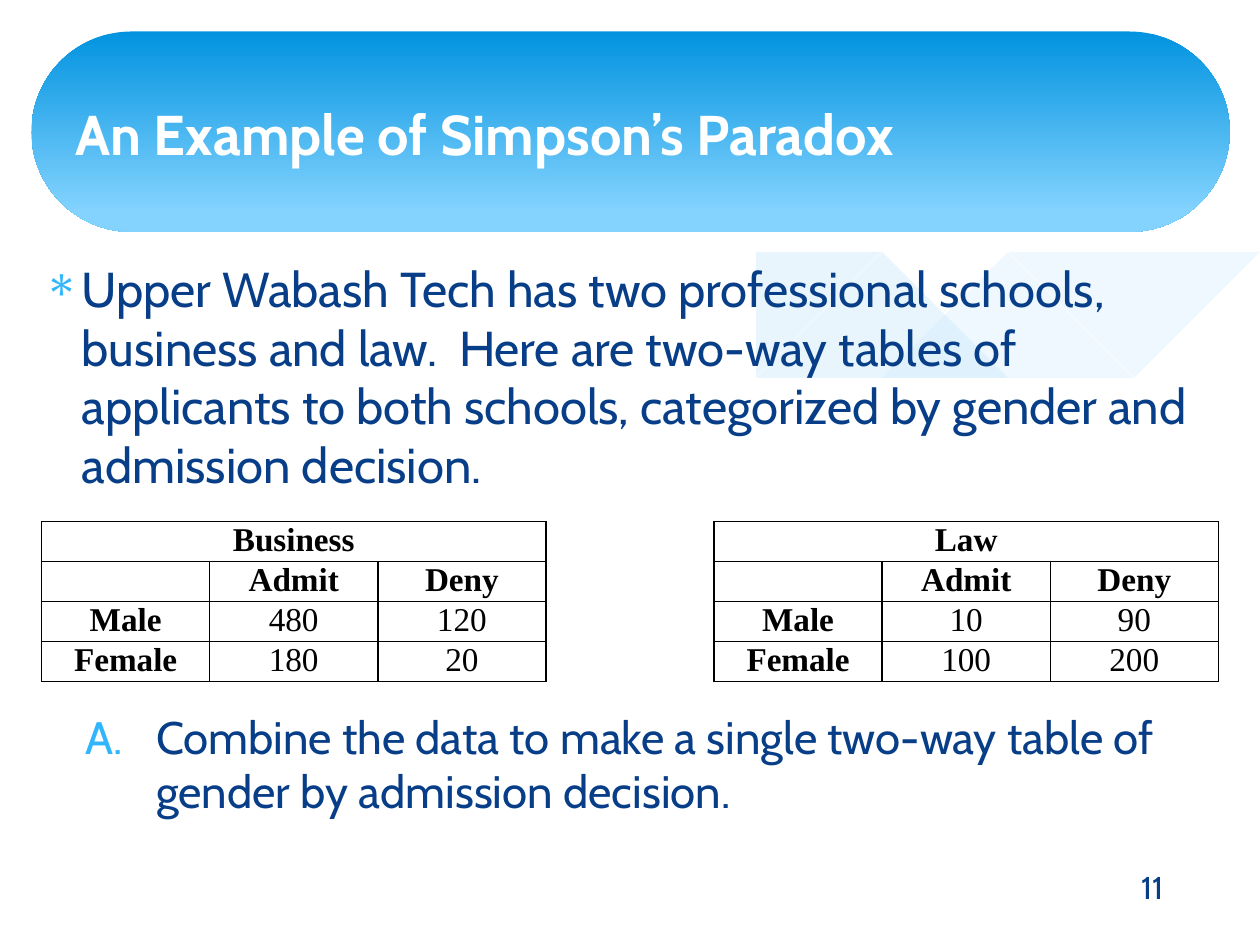
from lxml.etree import SubElement
from pptx import Presentation
from pptx.dml.color import RGBColor
from pptx.enum.shapes import MSO_SHAPE
from pptx.enum.text import MSO_ANCHOR, PP_ALIGN
from pptx.oxml.ns import qn
from pptx.util import Inches, Pt

NAVY, SKY, WHITE, BLACK, MIST = "073E87", "31B6FD", "FFFFFF", "000000", "C6E7FC"
TITLE = "An Example of Simpson’s Paradox"
INTRO = ("Upper Wabash Tech has two professional schools, business and law.  Here are two-way tables "
         "of applicants to both schools, categorized by gender and admission decision.")
QUESTION = "Combine the data to make a single two-way table of gender by admission decision."
PAGE = "11"
DECISIONS = ["Admit", "Deny"]
SCHOOLS = [
    ("Business", {"Male": [480, 120], "Female": [180, 20]}),
    ("Law", {"Male": [10, 90], "Female": [100, 200]}),
]
WAVES = [
    dict(fill=MIST, opacity=29, points=[
        (9.76, 2), (9.48, 2.04), (9.06, 2.13), (8.61, 2.23), (8.05, 2.37), (7.53, 2.48), (7.06, 2.57),
        (6.61, 2.65), (6.91, 2.69), (7.32, 2.74), (7.69, 2.77), (8.14, 2.78), (8.54, 2.76),
        (8.89, 2.72), (9.21, 2.65), (9.49, 2.57), (9.76, 2.47)]),
    dict(fill=MIST, opacity=40, points=[
        (8.93, 2.73), (8.37, 2.65), (7.75, 2.54), (7.06, 2.4), (6.29, 2.22), (5.84, 2.11), (5.41, 2.03),
        (5.02, 1.96), (4.65, 1.91), (4.2, 1.87), (3.8, 1.85), (3.44, 1.86), (3.13, 1.88), (2.86, 1.91),
        (3.23, 1.96), (3.62, 2.03), (4.04, 2.11), (4.49, 2.22), (5.3, 2.4), (5.84, 2.52), (6.34, 2.61),
        (6.8, 2.68), (7.22, 2.74), (7.61, 2.77), (7.96, 2.78), (8.28, 2.78), (8.57, 2.77), (8.93, 2.73)]),
    dict(line=WHITE, points=[
        (3.09, 1.95), (3.28, 1.92), (3.53, 1.89), (3.87, 1.87), (4.33, 1.87), (4.69, 1.89), (5.1, 1.92),
        (5.56, 1.97), (6.08, 2.04), (6.65, 2.13), (7.27, 2.26), (7.95, 2.41), (8.69, 2.61), (9.07, 2.72)]),
    dict(line=WHITE, points=[
        (6.13, 2.57), (6.53, 2.46), (6.95, 2.35), (7.48, 2.23), (8.06, 2.1), (8.66, 1.99), (8.95, 1.94),
        (9.24, 1.9), (9.51, 1.87), (9.75, 1.85)]),
    dict(fill=WHITE, points=[
        (9.77, 2.46), (9.5, 2.56), (9.2, 2.65), (8.87, 2.71), (8.5, 2.75), (8.09, 2.77), (7.61, 2.75),
        (7.08, 2.7), (6.48, 2.62), (5.79, 2.5), (5.03, 2.33), (4.47, 2.2), (3.91, 2.07), (3.4, 1.97),
        (2.92, 1.9), (2.5, 1.86), (2.11, 1.84), (1.77, 1.84), (1.32, 1.86), (0.95, 1.91), (0.67, 1.97),
        (0.46, 2.03), (0.23, 2.13), (0.23, 3.29), (9.77, 3.29)]),
]

deck = Presentation()
deck.slide_width, deck.slide_height = Inches(10), Inches(7.5)
slide = deck.slides.add_slide(deck.slide_layouts[6])


def color(value):
    return RGBColor.from_string(value)


def write(paragraph, text, size, ink=NAVY, font="Cabin", bold=False, align=PP_ALIGN.LEFT, before=0):
    paragraph.alignment = align
    paragraph.space_before = Pt(before)
    if not text:
        paragraph.font.size = Pt(size)
        return
    run = paragraph.add_run()
    run.text = text
    run.font.size, run.font.bold, run.font.name = Pt(size), bold, font
    run.font.color.rgb = color(ink)


def add_frame(left, top, width, height, anchor=MSO_ANCHOR.TOP):
    frame = slide.shapes.add_textbox(*map(Inches, (left, top, width, height))).text_frame
    frame.word_wrap = True
    frame.vertical_anchor = anchor
    return frame


def add_bullet(paragraph, margin, hanging, **mark):
    props = paragraph._p.get_or_add_pPr()
    props.set("marL", str(Inches(margin)))
    props.set("indent", str(-Inches(hanging)))
    SubElement(SubElement(props, qn("a:buClr")), qn("a:srgbClr"), val=SKY)
    if "char" in mark:
        SubElement(props, qn("a:buFont"), typeface="Symbol")
        SubElement(props, qn("a:buChar"), **mark)
    else:
        SubElement(props, qn("a:buFont"), typeface="+mj-lt")
        SubElement(props, qn("a:buAutoNum"), **mark)


def add_wave(points, fill=None, line=None, opacity=100):
    builder = slide.shapes.build_freeform(*points[0], scale=Inches(1))
    builder.add_line_segments(points[1:], close=fill is not None)
    wave = builder.convert_to_shape()
    wave.shadow.inherit = False
    if fill:
        wave.fill.solid()
        wave.fill.fore_color.rgb = color(fill)
        tint = wave.fill._xPr.find(qn("a:solidFill"))[0]
        SubElement(tint, qn("a:alpha"), val=str(opacity * 1000))
        wave.line.fill.background()
    else:
        wave.fill.background()
        wave.line.color.rgb = color(line)
        wave.line.width = Pt(0.25)


def add_banner():
    banner = slide.shapes.add_shape(MSO_SHAPE.ROUNDED_RECTANGLE, *map(Inches, (0.25, 0.25, 9.51, 1.59)))
    banner.adjustments[0] = 0.5
    banner.shadow.inherit = False
    banner.line.fill.background()
    banner.fill.gradient()
    banner.fill.gradient_angle = 270
    for stop, (position, shade) in zip(banner.fill.gradient_stops, [(0, "0293E0"), (0.9, "83D3FE")]):
        stop.position = position
        stop.color.rgb = color(shade)


def format_cell(cell, text, bold, sides):
    cell.margin_left = cell.margin_right = Inches(0.12)
    cell.margin_top = cell.margin_bottom = 0
    write(cell.text_frame.paragraphs[0], text, 19, ink=BLACK, font="Times New Roman",
          bold=bold, align=PP_ALIGN.CENTER)
    props = cell._tc.get_or_add_tcPr()
    for side in ("L", "R", "T", "B"):
        border = SubElement(props, qn(f"a:ln{side}"), w=str(Pt(1)))
        if side in sides:
            SubElement(SubElement(border, qn("a:solidFill")), qn("a:srgbClr"), val=BLACK)
        else:
            SubElement(border, qn("a:noFill"))
    cell.fill.background()


def add_school_table():
    block = len(DECISIONS) + 1
    step = block + 1
    columns, rows = len(SCHOOLS) * step - 1, 4
    table = slide.shapes.add_table(rows, columns, *map(Inches, (0.33, 4.14, 9.34, 1.16))).table
    table.first_row = table.horz_banding = False
    for row in table.rows:
        row.height = Inches(0.29)
    for index, (school, counts) in enumerate(SCHOOLS):
        start = index * step
        grid = [[school] + [""] * len(DECISIONS), [""] + DECISIONS]
        grid += [[gender, *map(str, values)] for gender, values in counts.items()]
        for r, texts in enumerate(grid):
            for c, text in enumerate(texts):
                format_cell(table.cell(r, start + c), text, r < 2 or c == 0, "LRTB")
        table.cell(0, start).merge(table.cell(0, start + block - 1))
    for r in range(rows):
        for c in range(block, columns, step):
            format_cell(table.cell(r, c), "", False, "LR")


add_banner()
for wave in WAVES:
    add_wave(**wave)

body = add_frame(0.25, 2, 9.5, 4.92)
intro, question = body.paragraphs[0], body.add_paragraph()
write(intro, INTRO, 28, before=5.6)
add_bullet(intro, 0.3, 0.3, char="∗")
write(question, QUESTION, 26, before=123)
add_bullet(question, 0.89, 0.56, type="alphaUcPeriod")

page = add_frame(8.51, 6.84, 1.27, 0.4, MSO_ANCHOR.MIDDLE)
write(page.paragraphs[0], PAGE, 18, align=PP_ALIGN.CENTER)
title = add_frame(0.5, 0.37, 9, 1.37, MSO_ANCHOR.MIDDLE)
write(title.paragraphs[0], TITLE, 32, ink=WHITE, bold=True)
add_school_table()

deck.save("out.pptx")
